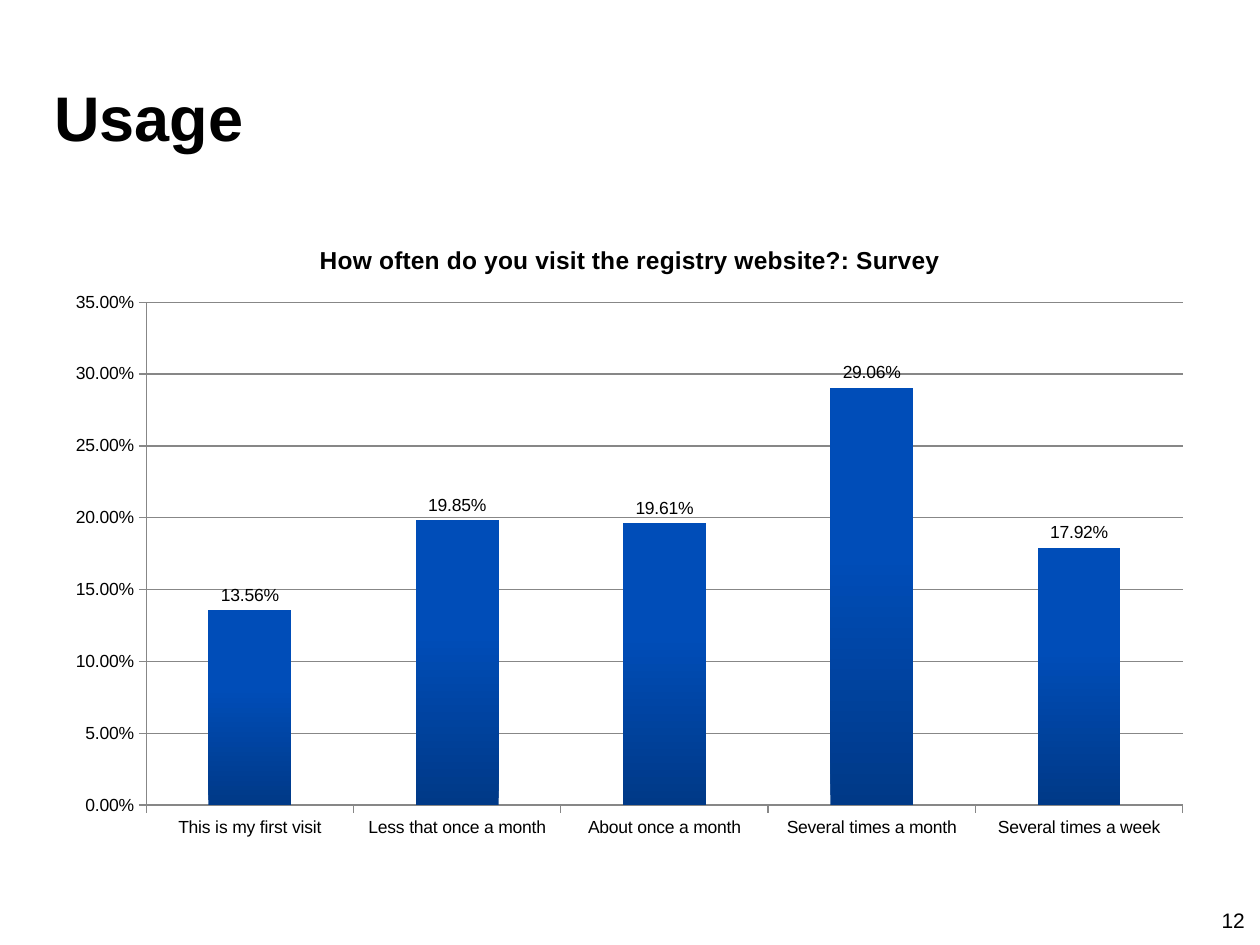
from lxml import etree
from pptx import Presentation
from pptx import util as u
from pptx.chart.data import CategoryChartData
from pptx.dml.color import RGBColor
from pptx.enum import chart as ch, text
from pptx.oxml.ns import qn

BLACK = RGBColor(0, 0, 0)
GRID_GREY = RGBColor(0x87, 0x87, 0x87)
BAR_LIGHT = RGBColor(0x00, 0x4D, 0xB8)
BAR_DARK = RGBColor(0x00, 0x39, 0x87)
FONT = "Arial"
PERCENT = "0.00%"
MARGIN = 0.43
WIDTH = 10 - 2 * MARGIN

VISITS = {
    "This is my first visit": 0.1356,
    "Less that once a month": 0.1985,
    "About once a month": 0.1961,
    "Several times a month": 0.2906,
    "Several times a week": 0.1792,
}


def style(font, size, bold=False):
    font.name, font.size, font.bold = FONT, u.Pt(size), bold
    font.color.rgb = BLACK


def add_text(s, box, words, size, anchor, align, bold=False):
    tf = s.shapes.add_textbox(*map(u.Inches, box)).text_frame
    tf.margin_left = tf.margin_right = tf.margin_top = tf.margin_bottom = 0
    tf.word_wrap = True
    tf.vertical_anchor = anchor
    p = tf.paragraphs[0]
    p.text, p.alignment = words, align
    style(p.font, size, bold)


def place_plot(chart, **shares):
    """Fix the inner plot area, given as shares of the chart frame."""
    area = chart.element.find(".//" + qn("c:plotArea"))
    for old in area.findall(qn("c:layout")):
        area.remove(old)
    layout = etree.Element(qn("c:layout"))
    manual = etree.SubElement(layout, qn("c:manualLayout"))
    settings = {"layoutTarget": "inner", "xMode": "edge", "yMode": "edge", **shares}
    for tag, value in settings.items():
        etree.SubElement(manual, qn("c:" + tag)).set("val", str(value))
    area.insert(0, layout)


def style_axis(axis):
    axis.major_tick_mark = ch.XL_TICK_MARK.OUTSIDE
    axis.minor_tick_mark = ch.XL_TICK_MARK.NONE
    axis.format.line.color.rgb = GRID_GREY
    style(axis.tick_labels.font, 10)


def style_bars(plot):
    plot.gap_width = 150
    plot.vary_by_categories = False
    fill = plot.series[0].format.fill
    fill.gradient()
    fill.gradient_angle = 90
    for stop, color, position in zip(fill.gradient_stops, (BAR_DARK, BAR_LIGHT), (0, 0.6)):
        stop.color.rgb, stop.position = color, position
    plot.has_data_labels = True
    labels = plot.data_labels
    labels.show_value = True
    labels.position = ch.XL_LABEL_POSITION.OUTSIDE_END
    labels.number_format, labels.number_format_is_linked = PERCENT, False
    style(labels.font, 10)


def add_visit_chart(s, box, title):
    data = CategoryChartData(number_format=PERCENT)
    data.categories = list(VISITS)
    data.add_series("Series 1", list(VISITS.values()))
    chart = s.shapes.add_chart(
        ch.XL_CHART_TYPE.COLUMN_CLUSTERED, *map(u.Inches, box), data).chart
    style(chart.font, 10)
    chart.has_legend = False
    p = chart.chart_title.text_frame.paragraphs[0]
    p.text = title
    style(p.font, 14, bold=True)

    style_axis(chart.category_axis)
    values = chart.value_axis
    style_axis(values)
    values.minimum_scale, values.maximum_scale, values.major_unit = 0, 0.35, 0.05
    values.tick_labels.number_format = PERCENT
    values.tick_labels.number_format_is_linked = False
    values.has_major_gridlines = True
    values.major_gridlines.format.line.color.rgb = GRID_GREY
    style_bars(chart.plots[0])
    place_plot(chart, x=0.08, y=0.13, w=0.9, h=0.8)


def main():
    prs = Presentation()
    prs.slide_width, prs.slide_height = u.Inches(10), u.Inches(7.5)
    s = prs.slides.add_slide(prs.slide_layouts[6])
    add_text(s, (MARGIN, 0.3, WIDTH, 1.25), "Usage", 36,
             text.MSO_ANCHOR.MIDDLE, text.PP_ALIGN.LEFT, bold=True)
    add_visit_chart(s, (MARGIN, 1.75, WIDTH, 4.99),
                    "How often do you visit the registry website?: Survey")
    add_text(s, (10 - MARGIN, 7.16, 0.31, 0.24), "12", 12,
             text.MSO_ANCHOR.BOTTOM, text.PP_ALIGN.RIGHT)
    prs.save("out.pptx")


if __name__ == "__main__":
    main()
